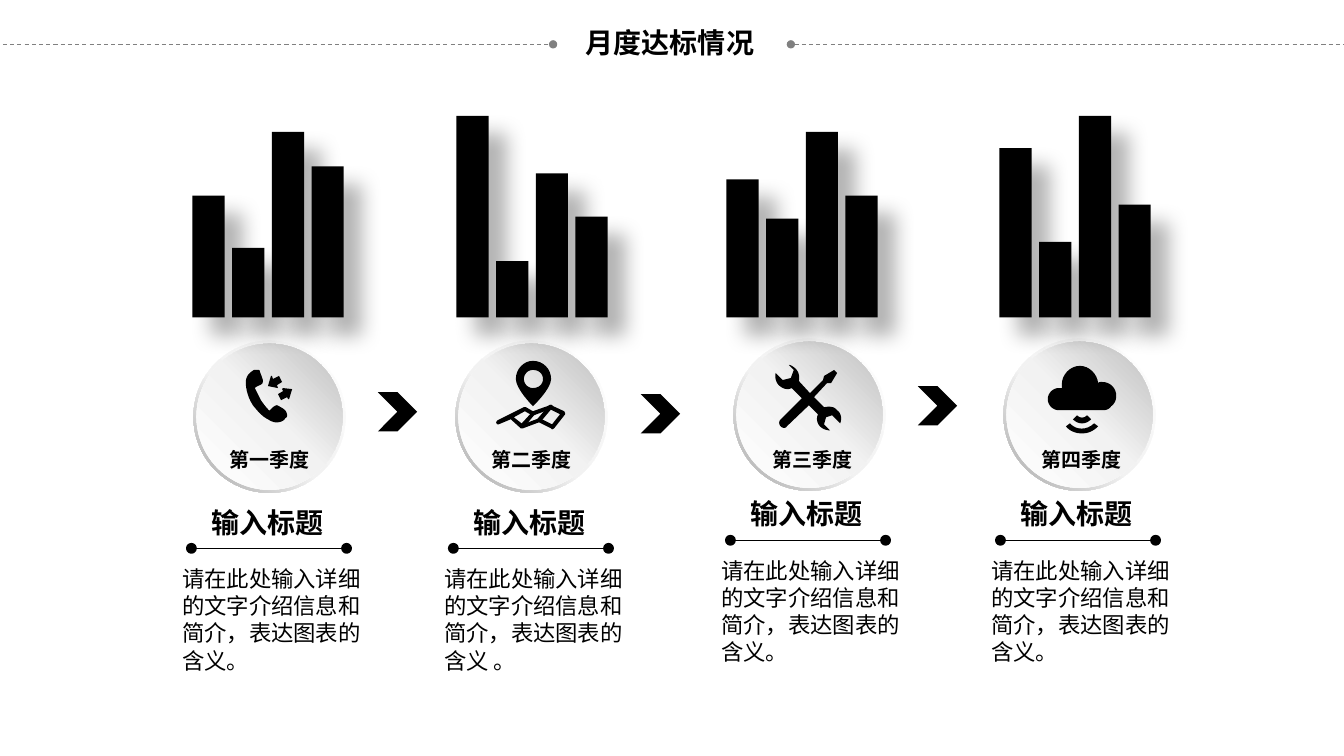
"""Build the slide of quarterly bar groups, badges and captions."""
from pptx import Presentation
from pptx.dml.color import RGBColor
from pptx.enum.dml import MSO_LINE as Dash
from pptx.enum.shapes import MSO_CONNECTOR as Link, MSO_SHAPE as Kind
from pptx.enum.text import MSO_ANCHOR as Anchor, PP_ALIGN as Align
from pptx.oxml import parse_xml
from pptx.oxml.ns import nsdecls, qn
from pptx.util import Pt

PX = 9144
BLACK = RGBColor(0, 0, 0)
GRAY = RGBColor(128, 128, 128)
NOTO, ROBOTO = "Noto Sans CJK SC", "Roboto Condensed"

HEADING = "月度达标情况"
TITLE = "输入标题"
BODY = "请在此处输入详细的文字介绍信息和简介，表达图表的含义"

QUARTERS = [
    dict(name="第一季度", bars=(121, 69, 184, 150), left=191,
         ring=(192, 338), label=215, text=(171, 501), end="。"),
    dict(name="第二季度", bars=(200, 56, 143, 100), left=453,
         ring=(452, 338), label=475, text=(431, 501), end=" 。"),
    dict(name="第三季度", bars=(137, 98, 184, 121), left=721,
         ring=(728, 336), label=754, text=(706, 493), end="。"),
    dict(name="第四季度", bars=(168, 75, 200, 112), left=992,
         ring=(996, 336), label=1021, text=(974, 493), end="。"),
]
BASE, WIDE, PITCH = 315, 32, 39.4
ARROWS = [(375, 389), (636, 391), (911, 383)]
GUIDES = [(-58, 549), (785, 1391)]

RING = ("FFFFFF", 0), ("F2F2F2", 55), ("A6A6A6", 100)
DISC = ("FFFFFF", 0), ("F2F2F2", 51), ("BFBFBF", 100)

PHONE = [
    [(277, 403), (275, 402), (274, 402, 272, 403, 271, 404), (269, 406),
     (268, 407), (267, 407), (264, 404, 261, 400, 259, 397),
     (257, 393, 255, 389, 253, 385), (254, 384), (258, 382),
     (260, 381, 261, 381, 261, 377), (260, 374, 259, 371, 258, 369),
     (258, 367, 257, 367, 256, 367), (252, 367),
     (251, 368, 244, 371, 244, 379), (244, 381, 244, 391, 251, 402),
     (256, 408, 260, 413, 266, 416), (268, 417, 269, 418, 270, 418),
     (272, 419, 273, 419, 275, 419), (280, 419, 283, 416, 283, 415),
     (285, 414, 285, 413, 285, 412), (285, 410, 284, 408, 283, 407),
     (281, 405, 277, 403, 277, 403)],
    [(266, 383), (276, 385), (275, 382), (280, 379), (277, 373),
     (271, 376), (270, 373), (269, 373)],
    [(290, 386), (281, 385), (280, 386), (281, 388), (276, 391),
     (279, 397), (285, 394), (286, 396), (287, 396)],
]
PIN = [
    [(529, 358), (520, 358, 512, 366, 512, 376),
     (512, 386, 529, 403, 529, 403), (529, 403, 547, 386, 547, 376),
     (547, 366, 539, 358, 529, 358)],
    [(529, 385), (524, 385, 520, 381, 520, 376),
     (520, 371, 524, 367, 529, 367), (535, 367, 539, 371, 539, 376),
     (539, 381, 535, 385, 529, 385)],
]
MAP = [
    [(548, 426), (547, 425), (535, 419), (519, 425), (517, 425), (507, 416),
     (495, 421), (494, 421, 493, 421, 493, 420),
     (492, 419, 493, 418, 494, 417), (520, 404), (522, 404), (529, 408),
     (546, 402), (547, 402), (560, 408), (561, 410), (561, 411), (550, 425)],
    [(535, 415), (536, 415), (548, 421), (556, 411), (546, 406), (530, 412),
     (528, 412), (521, 408), (510, 414), (519, 421)],
]
FOLDS = [
    [[(535, 418), (534, 418), (533, 417, 533, 416, 534, 415), (545, 402),
      (545, 402, 547, 401, 548, 402), (549, 403, 549, 404, 548, 405),
      (537, 418)]],
    [[(518, 424), (517, 424), (516, 423, 516, 422, 517, 421), (528, 409),
      (529, 408, 530, 408, 531, 409), (532, 410, 532, 411, 531, 411),
      (520, 424)]],
]
TOOLS = [
    [(831, 407), (828, 403, 823, 403, 818, 404), (808, 394), (821, 380),
     (825, 380), (831, 370), (828, 367), (818, 373), (817, 377), (804, 390),
     (793, 378), (794, 374, 793, 369, 790, 366),
     (788, 364, 785, 362, 783, 362), (788, 367), (785, 375), (777, 377),
     (770, 370), (769, 374, 770, 379, 773, 382),
     (777, 386, 782, 387, 786, 385), (796, 395), (775, 416),
     (773, 418, 773, 421, 775, 423), (777, 425, 780, 425, 781, 423),
     (803, 402), (812, 411), (810, 415, 811, 420, 814, 423),
     (817, 426, 821, 427, 824, 427), (818, 421), (820, 414), (826, 412),
     (834, 420), (836, 415, 835, 410, 831, 407)],
]
CLOUD = [
    [(1108, 393), (1108, 385, 1102, 379, 1094, 379),
     (1092, 379, 1091, 379, 1090, 380), (1089, 371, 1081, 363, 1072, 363),
     (1062, 363, 1054, 372, 1054, 381), (1054, 385), (1051, 385),
     (1045, 385, 1040, 390, 1040, 396), (1040, 402, 1045, 407, 1051, 407),
     (1095, 407), (1098, 407, 1101, 406, 1103, 403),
     (1106, 401, 1108, 397, 1108, 393)],
]
WAVES = [
    [[(1074, 430), (1068, 430, 1062, 428, 1058, 423), (1062, 420),
      (1068, 427, 1079, 427, 1086, 420), (1090, 423),
      (1085, 428, 1080, 430, 1074, 430)]],
    [[(1074, 420), (1071, 420, 1068, 419, 1065, 416), (1069, 412),
      (1072, 415, 1076, 415, 1079, 412), (1083, 416),
      (1080, 419, 1077, 420, 1074, 420)]],
]
ICONS = [PHONE, PIN, MAP, *FOLDS, TOOLS, CLOUD, *WAVES]

LOOKS = {
    "head": dict(size=Pt(20), bold=True, name=NOTO),
    "label": dict(size=Pt(14.3), bold=True, name=ROBOTO),
    "body": dict(size=Pt(16), bold=False, name=NOTO),
}
FLUSH = dict(margin_left=0, margin_right=0, margin_top=0, margin_bottom=0)

deck = Presentation()
deck.slide_width, deck.slide_height = 1334 * PX, 750 * PX
slide = deck.slides.add_slide(deck.slide_layouts[6])
shapes = slide.shapes


def emu(*sizes):
    return [round(size * PX) for size in sizes]


def paint(shape):
    shape.shadow.inherit = False
    shape.fill.solid()
    shape.fill.fore_color.rgb = BLACK
    shape.line.fill.background()
    return shape


def draw(kind, *box):
    return paint(shapes.add_shape(kind, *emu(*box)))


def blend(shape, stops, angle):
    marks = "".join(f'<a:gs pos="{pos * 1000}"><a:srgbClr val="{tint}"/></a:gs>'
                    for tint, pos in stops)
    props = shape.element.spPr
    props.replace(props.find(qn("a:solidFill")), parse_xml(
        f'<a:gradFill {nsdecls("a")} rotWithShape="1"><a:gsLst>{marks}</a:gsLst>'
        f'<a:lin ang="{angle * 60000}" scaled="0"/></a:gradFill>'))


def cast(shape):
    shape.element.spPr.find(qn("a:effectLst")).append(parse_xml(
        f'<a:outerShdw {nsdecls("a")} blurRad="{Pt(15)}" dist="{Pt(18)}" '
        'dir="2700000" algn="tl" rotWithShape="0"><a:srgbClr val="000000">'
        '<a:alpha val="30000"/></a:srgbClr></a:outerShdw>'))


def rule(start, end, y, color):
    line = shapes.add_connector(Link.STRAIGHT, *emu(start, y, end, y))
    line.line.color.rgb, line.line.width = color, Pt(0.75)
    line.element.spPr.append(parse_xml(f'<a:effectLst {nsdecls("a")}/>'))
    return line


def write(text, box, look, align=Align.CENTER, **frame):
    body = shapes.add_textbox(*emu(*box)).text_frame
    for key, value in dict(frame, word_wrap=True).items():
        setattr(body, key, value)
    para = body.paragraphs[0]
    para.alignment = align
    run = para.add_run()
    run.text = text
    for key, value in LOOKS[look].items():
        setattr(run.font, key, value)
    run.font.color.rgb = BLACK
    face = LOOKS[look]["name"]
    run.font._element.append(parse_xml(f'<a:ea {nsdecls("a")} typeface="{face}"/>'))
    return para


def trace(loop, steps=8):
    dots = [loop[0]]
    for node in loop[1:]:
        if len(node) == 2:
            dots.append(node)
            continue
        poles = [dots[-1], node[:2], node[2:4], node[4:]]
        for step in range(1, steps + 1):
            t = step / steps
            mix = (1 - t) ** 3, 3 * t * (1 - t) ** 2, 3 * t * t * (1 - t), t ** 3
            dots.append(tuple(sum(m * p[axis] for m, p in zip(mix, poles))
                              for axis in (0, 1)))
    return [emu(*dot) for dot in dots]


def sketch(loops):
    first, *rest = map(trace, loops)
    pen = shapes.build_freeform(*first[0], scale=1.0)
    pen.add_line_segments(first[1:], close=True)
    for dots in rest:
        pen.move_to(*dots[0])
        pen.add_line_segments(dots[1:], close=True)
    paint(pen.convert_to_shape())


for start, end in GUIDES:
    guide = rule(start, end, 44, GRAY)
    guide.line.dash_style = Dash.DASH
    for tip in ("headEnd", "tailEnd"):
        guide.line._ln.append(parse_xml(f'<a:{tip} {nsdecls("a")} type="oval"/>'))
write(HEADING, (539, 16, 252, 52), "head", vertical_anchor=Anchor.MIDDLE)

for part in QUARTERS:
    x, y = part["ring"]
    ring = draw(Kind.DONUT, x, y, 151, 151)
    ring.adjustments[0] = 0.05
    blend(ring, RING, 135)
    blend(draw(Kind.OVAL, x + 3, y + 3, 145, 145), DISC, 315)
    for spot, tall in enumerate(part["bars"]):
        cast(draw(Kind.RECTANGLE, part["left"] + spot * PITCH, BASE - tall, WIDE, tall))
    write(part["name"], (part["label"], 439, 105, 38), "label")
    x, y = part["text"]
    write(TITLE, (x, y, 189, 31), "head", **FLUSH)
    rule(x + 23, x + 169, y + 43, BLACK)
    for dot in (x + 15, x + 169):
        knob = draw(Kind.OVAL, dot, y + 39, 8, 8)
        knob.line.color.rgb, knob.line.width = BLACK, Pt(2)
    para = write(BODY + part["end"], (x, y + 55, 205, 165), "body", Align.LEFT)
    para.line_spacing = Pt(19.3)

for x, y in ARROWS:
    draw(Kind.CHEVRON, x, y, 39, 39)
for icon in ICONS:
    sketch(icon)

deck.save("out.pptx")
